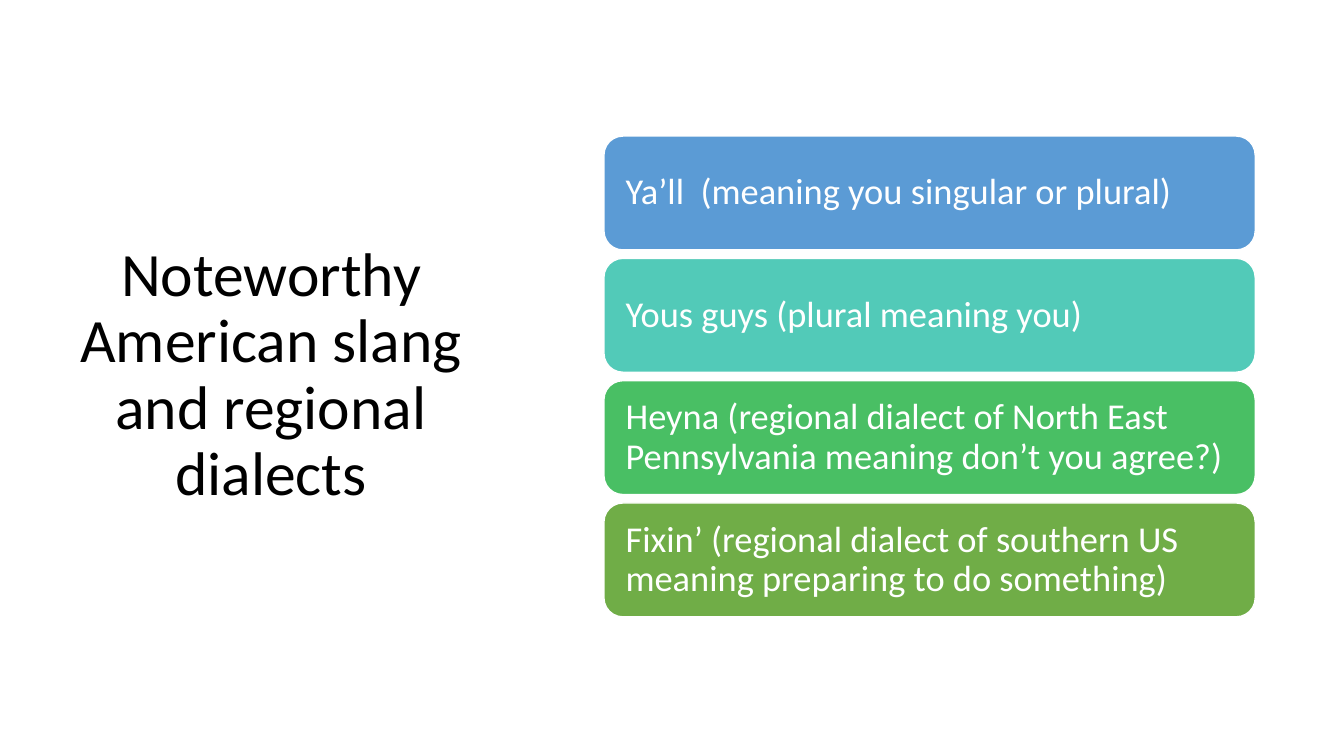
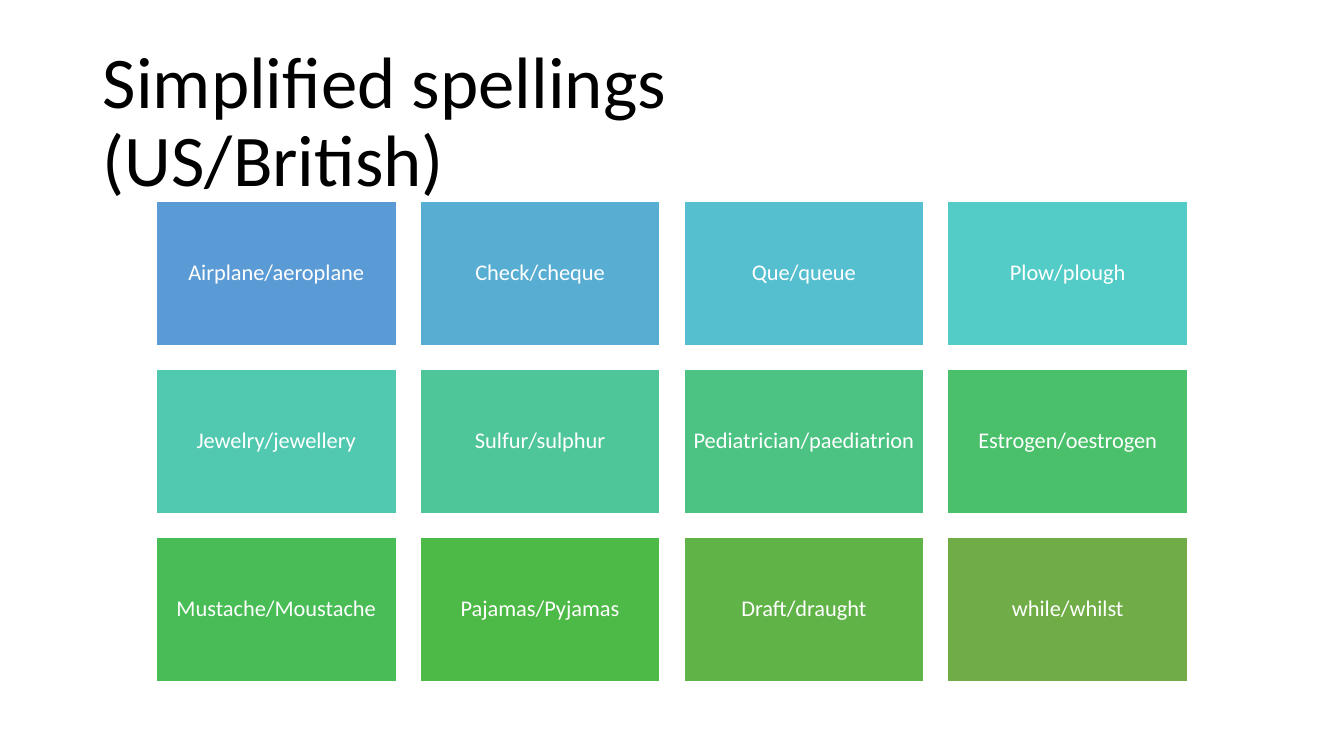
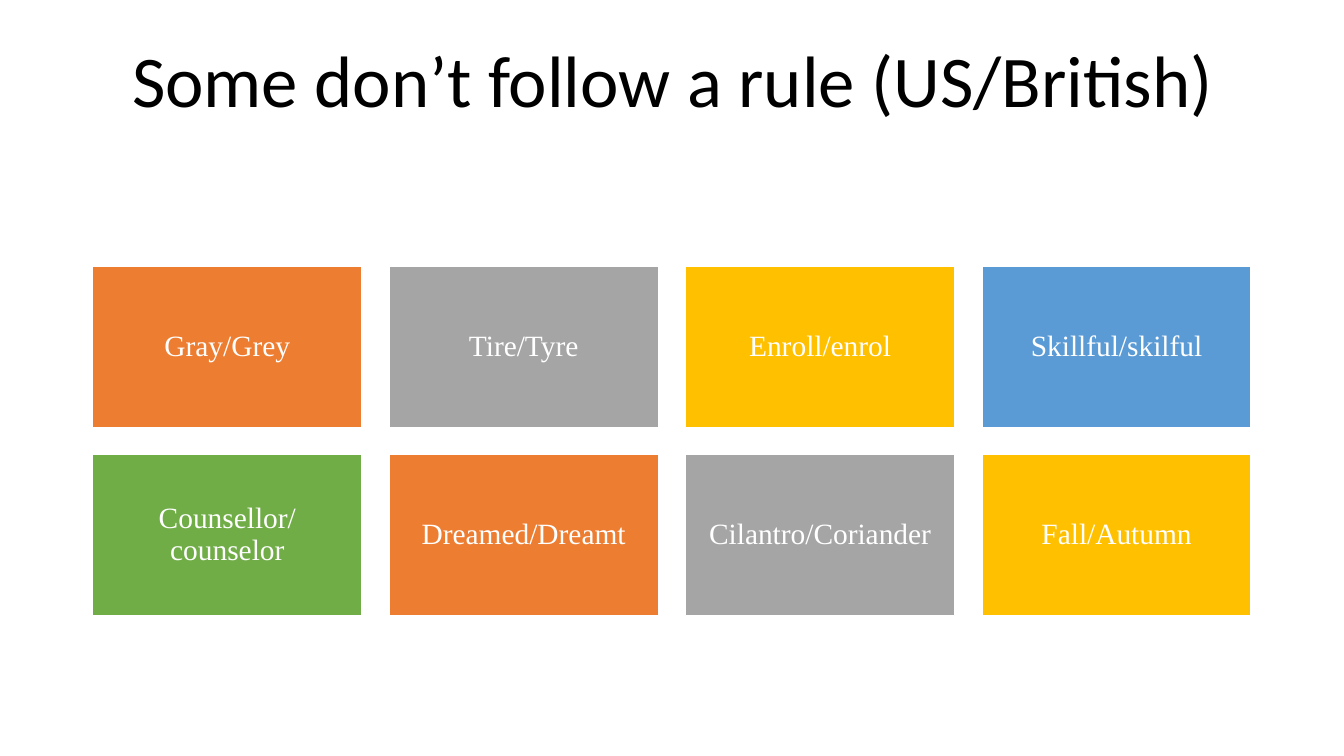
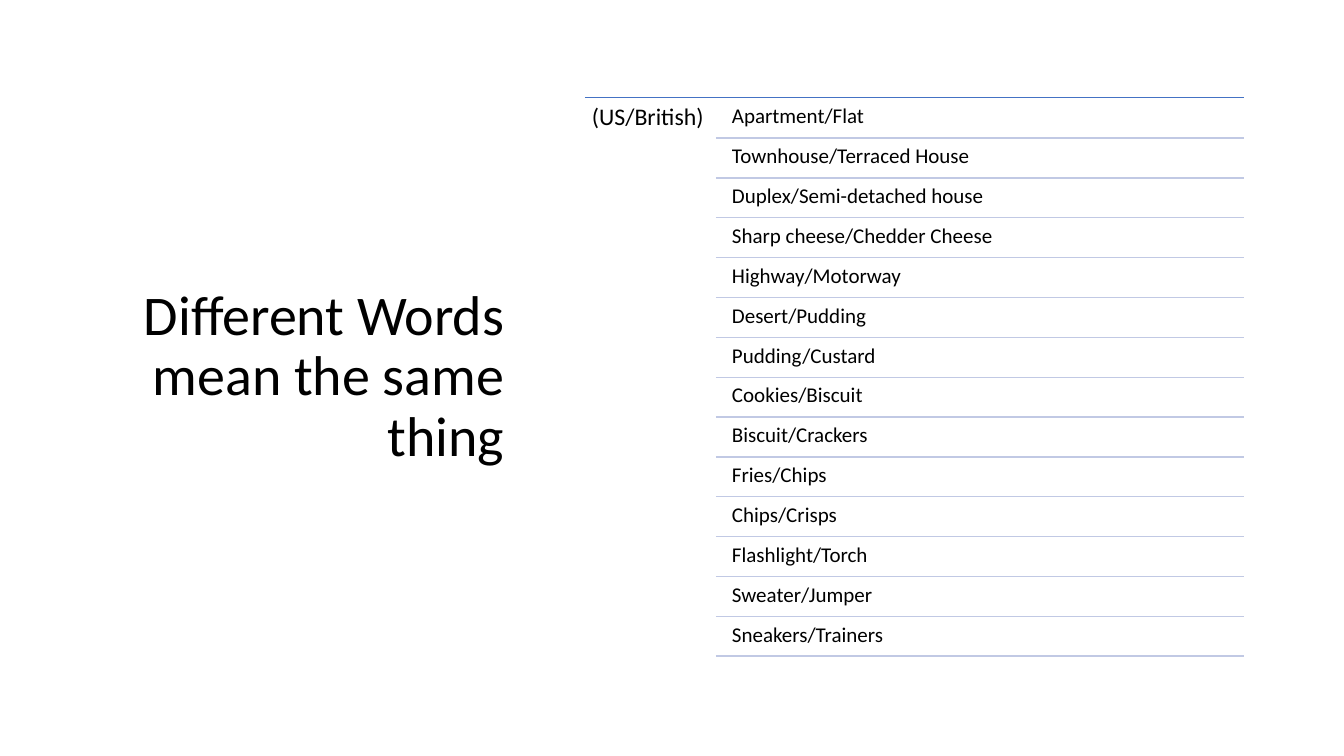
from dataclasses import dataclass
from itertools import cycle

from lxml import etree
from pptx import Presentation
from pptx.dml.color import RGBColor
from pptx.enum.shapes import MSO_CONNECTOR as Connector, MSO_SHAPE as Shape
from pptx.enum.text import MSO_ANCHOR as Anchor, MSO_AUTO_SIZE as AutoSize, PP_ALIGN as Align
from pptx.oxml.ns import qn
from pptx.util import Emu, Pt

PX = 9144  # EMU per px, 100 px to the inch
SLIDE_SIZE = (1333, 750)
TITLE_ONLY = 5


@dataclass(frozen=True)
class Theme:
    sans: str = "Calibri"
    serif: str = "Times New Roman"
    black: str = "000000"
    white: str = "FFFFFF"
    rule: str = "4472C4"
    pale_rule: str = "C1C9E4"
    line_spacing: float = 0.9
    side_title: int = 44
    top_title: int = 52
    words_title: int = 40
    slang: int = 26
    spelling: int = 16
    exception: int = 21
    heading: int = 17
    word: int = 15
    slang_fills: tuple = ("5B9BD5", "52CAB8", "49BF64", "70AD47")
    spelling_fills: tuple = (
        "5B9BD5", "58ADD2", "56BFCF", "53CCC8", "51C9B0", "4FC699",
        "4CC382", "4AC06B", "48BC55", "4DB946", "60B347", "70AD47",
    )
    accents: tuple = ("ED7D31", "A5A5A5", "FFC000", "5B9BD5", "70AD47")


THEME = Theme()
TOP_TITLE_BOX = (92, 61, 1150, 124)

# Each grid fills its area (left, top, right, bottom); gaps follow from the tile size.
TILE_SLIDES = [
    {
        "title": "Noteworthy American slang and regional dialects",
        "title_box": (63, 61, 412, 624),
        "title_format": {"size": THEME.side_title, "align": Align.CENTER},
        "tiles": [
            "Ya’ll\u00a0 (meaning you singular or plural)",
            "Yous guys (plural meaning you)",
            "Heyna (regional dialect of North East Pennsylvania meaning don’t you agree?)",
            "Fixin’ (regional dialect of southern US meaning preparing to do something)",
        ],
        "area": (599, 135, 1245, 612),
        "tile_size": (646, 113),
        "columns": 1,
        "shape": Shape.ROUNDED_RECTANGLE,
        "fills": THEME.slang_fills,
        "tile_format": {"size": THEME.slang, "align": Align.LEFT, "inset": 16},
    },
    {
        "title": "Simplified spellings\n(US/British)",
        "title_box": TOP_TITLE_BOX,
        "title_format": {"size": THEME.top_title, "align": Align.LEFT},
        "tiles": [
            "Airplane/aeroplane", "Check/cheque", "Que/queue", "Plow/plough",
            "Jewelry/jewellery", "Sulfur/sulphur", "Pediatrician/paediatrion", "Estrogen/oestrogen",
            "Mustache/Moustache", "Pajamas/Pyjamas", "Draft/draught", "while/whilst",
        ],
        "area": (155, 200, 1178, 676),
        "tile_size": (238, 143),
        "columns": 4,
        "shape": Shape.RECTANGLE,
        "fills": THEME.spelling_fills,
        "tile_format": {"size": THEME.spelling, "align": Align.CENTER, "inset": 7},
    },
    {
        "title": "Some don’t follow a rule\u00a0(US/British)",
        "title_box": TOP_TITLE_BOX,
        "title_format": {"size": THEME.top_title, "align": Align.CENTER, "margin_bottom": 84},
        "tiles": [
            "Gray/Grey", "Tire/Tyre", "Enroll/enrol", "Skillful/skilful",
            "Counsellor/counselor", "Dreamed/Dreamt", "Cilantro/Coriander", "Fall/Autumn",
        ],
        "area": (92, 264, 1241, 611),
        "tile_size": (267, 160),
        "columns": 4,
        "shape": Shape.RECTANGLE,
        "fills": THEME.accents,
        "tile_format": {
            "size": THEME.exception, "align": Align.CENTER, "inset": 9, "font": THEME.serif,
        },
    },
]

WORDS_SLIDE = {
    "title": "Different Words mean the same thing",
    "title_box": (79, 97, 431, 555),
    "title_format": {"size": THEME.words_title, "align": Align.RIGHT},
    "heading": "(US/British)",
    "heading_box": (580, 97, 131, 555),
    "words": [
        "Apartment/Flat", "Townhouse/Terraced House", "Duplex/Semi-detached house",
        "Sharp cheese/Chedder Cheese", "Highway/Motorway", "Desert/Pudding",
        "Pudding/Custard", "Cookies/Biscuit", "Biscuit/Crackers", "Fries/Chips",
        "Chips/Crisps", "Flashlight/Torch", "Sweater/Jumper", "Sneakers/Trainers",
    ],
    "word_left": 720,
    "word_size": (513, 38),
    "word_span": (99, 651),
    "rule_left": 710,
    "rule_right": 1234,
}


def emu(*lengths):
    return [Emu(round(length * PX)) for length in lengths]


def spread(start, end, size, count):
    """Starts of count equal parts that fill start to end with equal gaps."""
    step = (end - start - size) / (count - 1) if count > 1 else 0
    return [start + index * step for index in range(count)]


def write(box, text, size, align=Align.LEFT, font=THEME.sans, color=THEME.black,
          anchor=Anchor.MIDDLE, inset=None, margin_bottom=None):
    frame = box.text_frame
    frame.text = ""
    margins = {}
    if inset is not None:
        margins = {f"margin_{side}": inset for side in ("left", "top", "right", "bottom")}
    if margin_bottom is not None:
        margins["margin_bottom"] = margin_bottom
    frame_format = {"word_wrap": True, "auto_size": AutoSize.NONE, "vertical_anchor": anchor}
    frame_format |= {side: emu(margin)[0] for side, margin in margins.items()}
    para = frame.paragraphs[0]
    para.text = text.replace("\n", "\v")
    targets = [
        (frame, frame_format),
        (para, {"alignment": align, "line_spacing": THEME.line_spacing}),
    ]
    targets += [(span.font, {"name": font, "size": Pt(size)}) for span in para.runs]
    for target, values in targets:
        for name, value in values.items():
            setattr(target, name, value)
    for span in para.runs:
        span.font.color.rgb = RGBColor.from_string(color)


def add_titled_page(deck, content):
    page = deck.slides.add_slide(deck.slide_layouts[TITLE_ONLY])
    title = page.shapes.title
    title.left, title.top, title.width, title.height = emu(*content["title_box"])
    write(title, content["title"], **content["title_format"])
    return page


def add_tile(page, shape, box, text, fill, tile_format):
    tile = page.shapes.add_shape(shape, *emu(*box))
    tile.shadow.inherit = False
    tile.fill.solid()
    tile.fill.fore_color.rgb = RGBColor.from_string(fill)
    tile.line.color.rgb = RGBColor.from_string(THEME.white)
    tile.line.width = Pt(1)
    write(tile, text, color=THEME.white, **tile_format)


def add_rule(page, left, right, y, color):
    rule = page.shapes.add_connector(Connector.STRAIGHT, *emu(left, y, right, y))
    rule.line.color.rgb = RGBColor.from_string(color)
    rule.line.width = Pt(1)
    etree.SubElement(rule._element.spPr, qn("a:effectLst"))


def add_label(page, box, text, size, inset):
    label = page.shapes.add_textbox(*emu(*box))
    write(label, text, size, anchor=Anchor.TOP, inset=inset)


def build_tile_page(deck, content):
    page = add_titled_page(deck, content)
    left, top, right, bottom = content["area"]
    width, height = content["tile_size"]
    columns = content["columns"]
    rows = len(content["tiles"]) // columns
    places = [
        (x, y, width, height)
        for y in spread(top, bottom, height, rows)
        for x in spread(left, right, width, columns)
    ]
    for box, text, fill in zip(places, content["tiles"], cycle(content["fills"])):
        add_tile(page, content["shape"], box, text, fill, content["tile_format"])


def build_words_page(deck, content):
    page = add_titled_page(deck, content)
    heading_left, heading_top = content["heading_box"][:2]
    add_rule(page, heading_left, content["rule_right"], heading_top, THEME.rule)
    add_label(page, content["heading_box"], content["heading"], THEME.heading, 7)
    width, height = content["word_size"]
    tops = spread(*content["word_span"], height, len(content["words"]))
    for top, text in zip(tops, content["words"]):
        add_label(page, (content["word_left"], top, width, height), text, THEME.word, 6)
        add_rule(page, content["rule_left"], content["rule_right"], top + height, THEME.pale_rule)


def main():
    deck = Presentation()
    deck.slide_width, deck.slide_height = emu(*SLIDE_SIZE)
    for content in TILE_SLIDES:
        build_tile_page(deck, content)
    build_words_page(deck, WORDS_SLIDE)
    deck.save("out.pptx")


if __name__ == "__main__":
    main()
